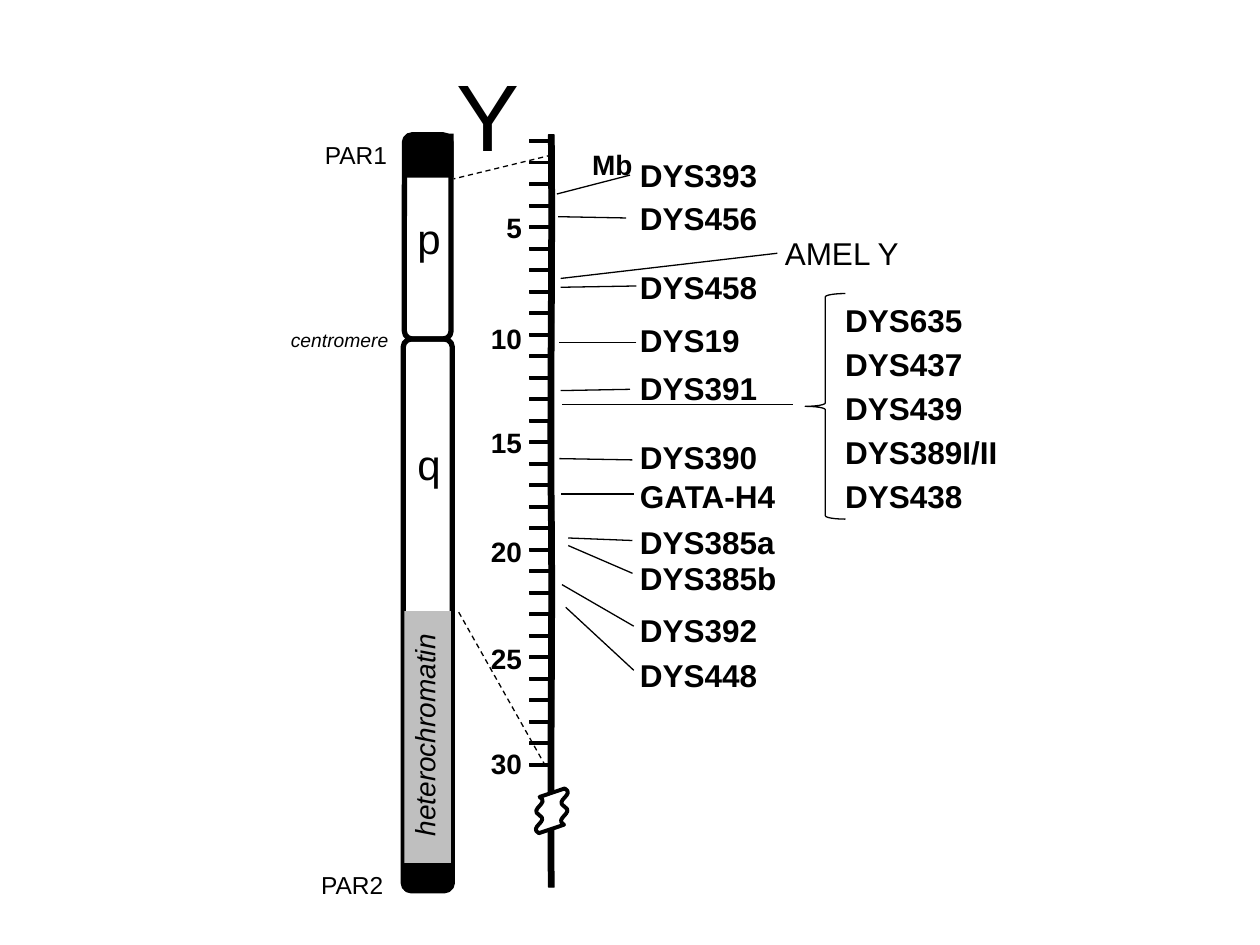
from lxml import etree
from pptx import Presentation
from pptx.dml.color import RGBColor
from pptx.enum.dml import MSO_LINE
from pptx.enum.shapes import MSO_CONNECTOR, MSO_SHAPE as SHAPE
from pptx.enum.text import MSO_ANCHOR, MSO_AUTO_SIZE, PP_ALIGN as ALIGN
from pptx.oxml.ns import qn
from pptx.util import Inches, Pt

COLORS = {"ink": "000000", "paper": "FFFFFF", "heterochromatin": "BFBFBF"}

ARMS = [(3.21, 1.07, 0.37, 1.62), (3.2, 2.69, 0.39, 4.38)]
BANDS = [
    (3.21, 4.85, 0.37, 2, "heterochromatin"),
    (3.21, 6.85, 0.37, 0.22, "ink"),
    (3.23, 1.06, 0.37, 0.35, "ink"),
]

TICKS, FIRST_TICK, LAST_TICK = 30, 1.12, 6.07
TICK_W, TICK_H = 0.17, 0.02
SCALE = {5: 1.62, 10: 2.5, 15: 3.33, 20: 4.19, 25: 5.04, 30: 5.88}

LOCUS_X, CLUSTER_X = 4.98, 6.61
LOCI = [
    ("DYS393", 1.19, 1.14, (5, 1.39, 4.42, 1.54)),
    ("DYS456", 1.53, 1.14, (4.97, 1.73, 4.43, 1.72)),
    ("DYS458", 2.08, 1.14, (5.05, 2.27, 4.45, 2.28)),
    ("DYS19", 2.5, 0.99, (5.05, 2.72, 4.44, 2.72)),
    ("DYS391", 2.88, 1.14, (5, 3.09, 4.45, 3.1)),
    ("DYS390", 3.43, 1.14, (5.02, 3.65, 4.44, 3.64)),
    ("GATA-H4", 3.74, 1.29, (5.03, 3.92, 4.45, 3.92)),
    ("DYS385a", 4.1, 1.28, (5.02, 4.29, 4.51, 4.27)),
    ("DYS385b", 4.39, 1.3, (5.02, 4.55, 4.51, 4.33)),
    ("DYS392", 4.8, 1.14, (5.03, 4.97, 4.46, 4.64)),
    ("DYS448", 5.16, 1.14, (5.03, 5.32, 4.49, 4.82)),
]
CLUSTER = [("DYS635", 1.14), ("DYS437", 1.14), ("DYS439", 1.14),
           ("DYS389I/II", 1.52), ("DYS438", 1.14)]


class Diagram:
    font = "Arial"

    def __init__(self, slide):
        self.slide = slide

    def color(self, name):
        return RGBColor.from_string(COLORS[name])

    def set_text(self, sp, text, size, bold=False, italic=False, align=ALIGN.LEFT):
        tf = sp.text_frame
        tf.word_wrap = False
        tf.text = text
        p = tf.paragraphs[0]
        p.alignment = align
        p.font.name = self.font
        p.font.size = Pt(size)
        p.font.bold = bold
        p.font.italic = italic
        p.font.color.rgb = self.color("ink")
        return tf

    def title(self, text, x, y, w, h, size):
        sp = self.slide.shapes.title
        sp.left, sp.top, sp.width, sp.height = map(Inches, (x, y, w, h))
        tf = self.set_text(sp, text, size)
        tf.auto_size = MSO_AUTO_SIZE.NONE
        tf.vertical_anchor = MSO_ANCHOR.TOP

    def label(self, text, x, y, w, h, size, rotation=0, **style):
        sp = self.slide.shapes.add_textbox(*map(Inches, (x, y, w, h)))
        sp.rotation = rotation
        tf = self.set_text(sp, text, size, **style)
        tf.auto_size = MSO_AUTO_SIZE.SHAPE_TO_FIT_TEXT

    def shape(self, kind, x, y, w, h, fill=None, line=None, rotation=0, adjust=()):
        sp = self.slide.shapes.add_shape(kind, *map(Inches, (x, y, w, h)))
        sp.shadow.inherit = False
        sp.rotation = rotation
        for i, value in enumerate(adjust):
            sp.adjustments[i] = value
        if fill:
            sp.fill.solid()
            sp.fill.fore_color.rgb = self.color(fill)
        else:
            sp.fill.background()
        if line:
            sp.line.color.rgb = self.color("ink")
            sp.line.width = Pt(line)
        else:
            sp.line.fill.background()

    def line(self, x1, y1, x2, y2, dashed=False):
        cx = self.slide.shapes.add_connector(
            MSO_CONNECTOR.STRAIGHT, *map(Inches, (x1, y1, x2, y2)))
        cx.line.color.rgb = self.color("ink")
        cx.line.width = Pt(0.75)
        if dashed:
            cx.line.dash_style = MSO_LINE.DASH
        etree.SubElement(cx._element.spPr, qn("a:effectLst"))


def draw_chromosome(d):
    for arm in ARMS:
        d.shape(SHAPE.ROUNDED_RECTANGLE, *arm, line=3, adjust=[0.167])
    for *box, fill in BANDS:
        d.shape(SHAPE.RECTANGLE, *box, fill=fill)
    d.label("p", 3.17, 1.64, 0.47, 0.42, 24, align=ALIGN.CENTER)
    d.label("q", 3.17, 3.43, 0.47, 0.42, 24, align=ALIGN.CENTER)
    d.label("PAR1", 2.48, 1.06, 0.7, 0.34, 14)
    d.label("PAR2", 2.45, 6.86, 0.7, 0.34, 14)
    d.label("centromere", 2.21, 2.56, 0.98, 0.29, 11, italic=True)
    d.label("heterochromatin", 2.46, 5.64, 1.82, 0.37, 16, rotation=270, italic=True)


def draw_scale(d):
    d.shape(SHAPE.DOUBLE_WAVE, 1.39, 4.03, 5.97, 0.05, fill="ink", line=0.75,
            rotation=90, adjust=[0.065, 0])
    step = (LAST_TICK - FIRST_TICK) / (TICKS - 1)
    for i in range(TICKS):
        d.shape(SHAPE.RECTANGLE, 4.2, FIRST_TICK + i * step - TICK_H / 2,
                TICK_W, TICK_H, fill="ink", line=0.75)
    for value, top in SCALE.items():
        d.label(str(value), 3.79, top, 0.45, 0.37, 16, bold=True, align=ALIGN.RIGHT)
    d.label("Mb", 4.6, 1.12, 0.52, 0.37, 16, bold=True)
    d.shape(SHAPE.DOUBLE_WAVE, 4.2, 6.31, 0.36, 0.25, fill="paper", line=2.25,
            rotation=271.3, adjust=[0.103, 0.1])
    d.line(4.38, 1.23, 3.6, 1.42, dashed=True)
    d.line(4.33, 6.08, 3.63, 4.84, dashed=True)


def draw_loci(d):
    for name, top, width, leader in LOCI:
        d.label(name, LOCUS_X, top, width, 0.4, 18, bold=True)
        d.line(*leader)
    d.label("AMEL Y", 6.13, 1.81, 1.11, 0.4, 18)
    d.line(6.17, 2.01, 4.45, 2.21)
    for i, (name, width) in enumerate(CLUSTER):
        d.label(name, CLUSTER_X, 2.34 + 0.35 * i, width, 0.4, 18, bold=True)
    d.line(6.29, 3.21, 4.46, 3.21)
    d.shape(SHAPE.LEFT_BRACE, 6.39, 2.33, 0.32, 1.79, line=0.75)


def main():
    prs = Presentation()
    prs.slide_width, prs.slide_height = Inches(10), Inches(7.5)
    s = prs.slides.add_slide(prs.slide_layouts[5])
    d = Diagram(s)
    d.title("Y", 3.52, 0.4, 0.7, 1, 54)
    draw_chromosome(d)
    draw_scale(d)
    draw_loci(d)
    prs.save("out.pptx")


if __name__ == "__main__":
    main()
